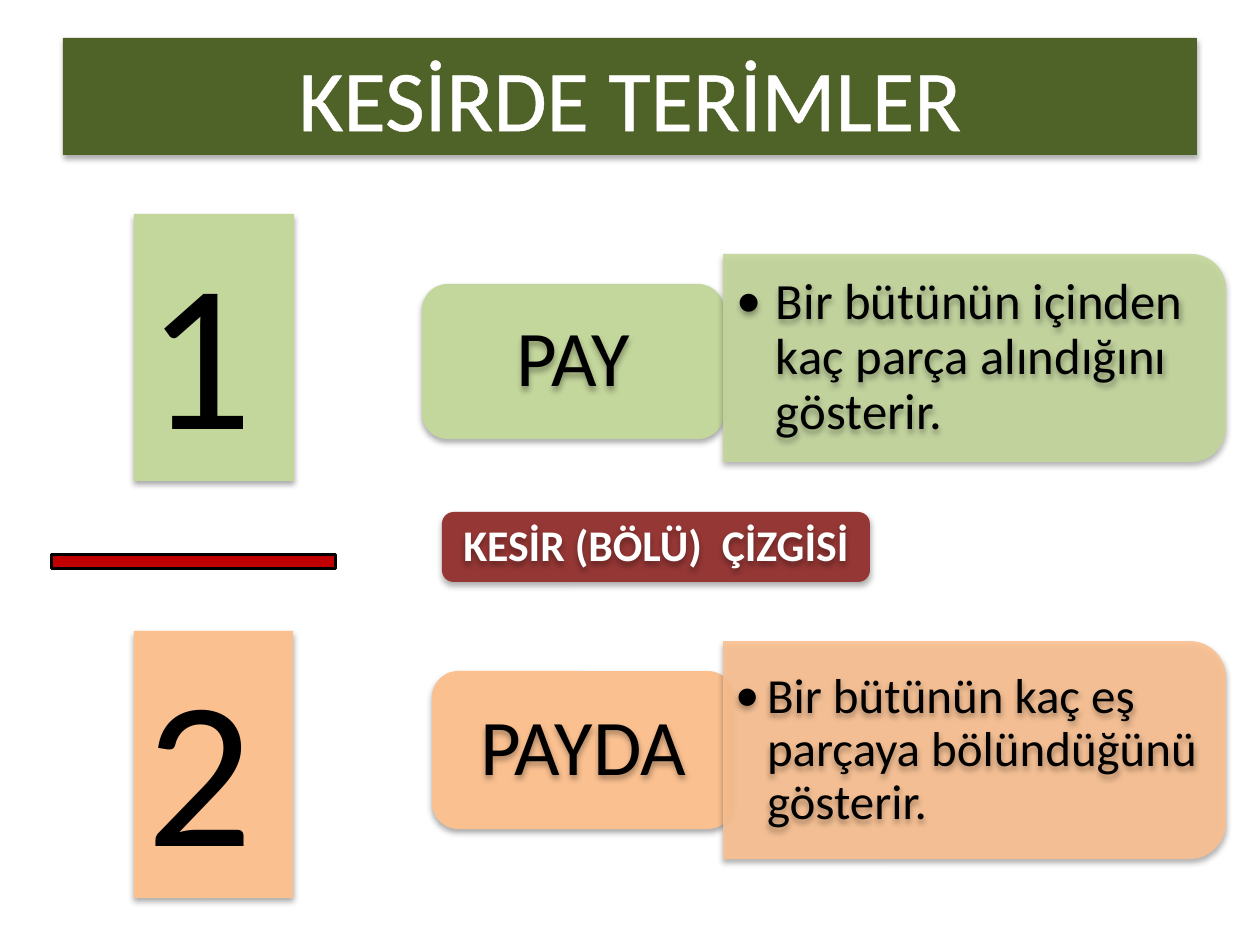
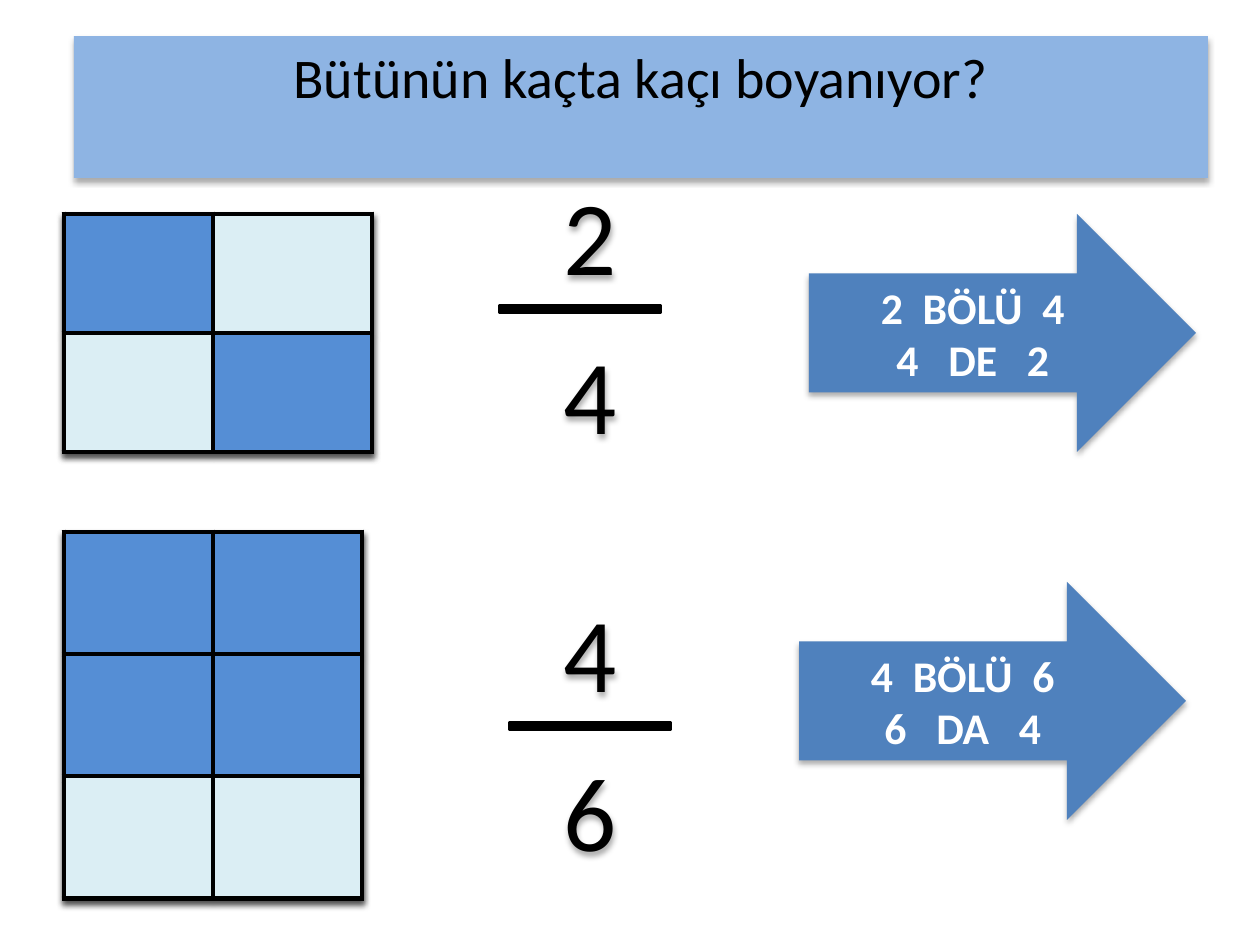
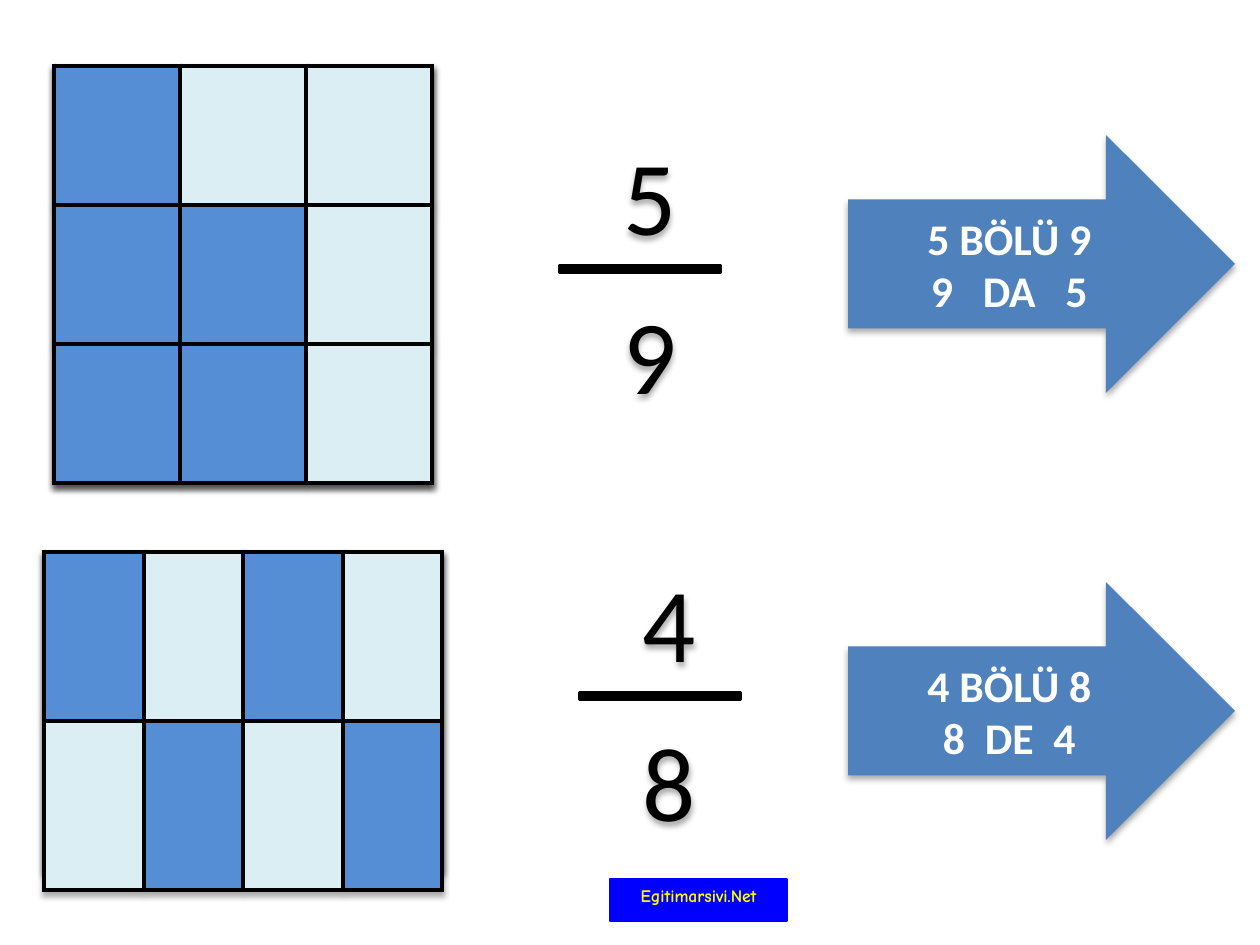
from dataclasses import dataclass

from lxml import etree
from pptx import Presentation
from pptx import util as u
from pptx.dml.color import RGBColor
from pptx.enum import shapes, text
from pptx.oxml import ns, parse_xml

SCALE = 9144000 / 1260  # EMU in one px
KIND = shapes.MSO_SHAPE


@dataclass(frozen=True)
class Theme:
    font: str = "Calibri"
    black: str = "000000"
    white: str = "FFFFFF"
    title_green: str = "4F6228"
    title_blue: str = "8EB4E3"
    green: str = "C3D69B"
    orange: str = "FAC090"
    maroon: str = "953735"
    red: str = "C00000"
    arrow: str = "4F81BD"
    painted: str = "558ED5"
    unpainted: str = "DBEEF4"
    label_font: str = "Comic Neue"
    label_fill: str = "0000FF"
    label_text: str = "FFFF00"
    label_size: int = 10
    title_size: float = 49.5
    title_outline: float = 1.45
    question_size: int = 32
    huge_size: int = 120
    digit_size: int = 60
    term_size: int = 45
    strong_size: int = 25
    outline: int = 2
    frame_line: int = 1
    grid_line: int = 3


THEME = Theme()

TITLE = ("KESİRDE TERİMLER", (63, 38, 1134, 117))
QUESTION = ("Bütünün kaçta kaçı boyanıyor?", (74, 36, 1134, 142))

# In a line made of parts, a number is a gap that many spaces wide.
LINE_NAME = [("KESİR (BÖLÜ)", 2, "ÇİZGİSİ")]

TERMS = [
    {"number": "1", "number_box": (134, 214, 160, 267), "color": THEME.green,
     "term": "PAY", "term_box": (422, 284, 302, 155),
     "meaning": "Bir bütünün içinden kaç parça alındığını gösterir.",
     "panel": (723, 254, 503, 208), "meaning_box": (722, 264, 491, 188),
     "size": 29, "indent": 39, "insets": (15, 8)},
    {"number": "2", "number_box": (134, 631, 159, 267), "color": THEME.orange,
     "term": "PAYDA", "term_box": (432, 671, 302, 158),
     "meaning": "Bir bütünün kaç eş parçaya bölündüğünü gösterir.",
     "panel": (723, 641, 503, 218), "meaning_box": (722, 652, 495, 197),
     "size": 28, "indent": 32, "insets": (13, 6)},
]

# In a grid, # is a painted cell and . an unpainted one.
# Row heights: the framed whole, the divided whole, the painted parts.
EXERCISES = [
    [
        {"grid": ["#.", ".#"], "at": (64, 214), "columns": [149, 159],
         "heights": [[119] * 2] * 3,
         "fraction": "2/4", "digit_at": (551, 165), "bar_left": 471,
         "arrow": (809, 214, 387, 238),
         "reading": [("2", 2, "BÖLÜ", 2, "4"), ("4", 3, "DE", 3, "2")]},
        {"grid": ["##", "##", ".."], "at": (64, 532), "columns": [149] * 2,
         "heights": [[122] * 3, [126, 126, 115], [122] * 3],
         "fraction": "4/6", "digit_at": (551, 582), "bar_left": 481,
         "arrow": (799, 582, 387, 238),
         "reading": [("4", 2, "BÖLÜ", 2, "6"), ("6", 3, "DA", 3, "4")]},
    ],
    [
        {"grid": ["#..", "##.", "##."], "at": (54, 66), "columns": [126] * 3,
         "heights": [[139] * 3] * 3,
         "fraction": "5/9", "digit_at": (610, 125), "bar_left": 531,
         "arrow": (848, 135, 387, 258),
         "reading": ["5 BÖLÜ 9", ("9", 3, "DA", 3, "5")]},
        {"grid": ["#.#.", ".#.#"], "at": (44, 552), "columns": [100, 99, 100, 99],
         "heights": [[159] * 2, [159] * 2, [169] * 2],
         "fraction": "4/8", "digit_at": (630, 552), "bar_left": 551,
         "arrow": (848, 582, 387, 258),
         "reading": ["4 BÖLÜ 8", ("8", 2, "DE", 2, "4")]},
    ],
]

SITE_LABEL = ("Egitimarsivi.Net", (610, 879, 177, 42))


def px(value):
    return u.Emu(round(value * SCALE))


def place(box):
    return [px(value) for value in box]


def shadow_effect():
    return parse_xml(
        f'<a:effectLst {ns.nsdecls("a")}>'
        '<a:outerShdw blurRad="44450" dist="27940" dir="5400000" rotWithShape="0">'
        f'<a:srgbClr val="{THEME.black}"><a:alpha val="32000"/></a:srgbClr>'
        '</a:outerShdw></a:effectLst>')


def line_xml(tag, width, color):
    return parse_xml(
        f'<a:{tag} {ns.nsdecls("a")} w="{u.Pt(width)}"><a:solidFill>'
        f'<a:srgbClr val="{color}"/></a:solidFill></a:{tag}>')


def paint(shape, color, opacity=100):
    shape.fill.solid()
    shape.fill.fore_color.rgb = RGBColor.from_string(color)
    if opacity < 100:
        tint = shape.fill._xPr.find(".//" + ns.qn("a:srgbClr"))
        etree.SubElement(tint, ns.qn("a:alpha"), val=str(opacity * 1000))


def add_block(page, kind, box, color, line=None, width=THEME.outline, opacity=100,
              rotation=0, shadow=True):
    block = page.shapes.add_shape(kind, *place(box))
    block.rotation = rotation
    paint(block, color, opacity)
    if line:
        block.line.color.rgb = RGBColor.from_string(line)
        block.line.width = u.Pt(width)
    else:
        block.line.fill.background()
    if shadow:
        block._element.spPr.append(shadow_effect())
    else:
        block.shadow.inherit = False
    return block


def write(shape, lines, size, color=THEME.black, font=THEME.font, bold=False, align="CENTER",
          anchor="MIDDLE", insets=(13, 6), spacing=1.0, bullet_indent=0, outline=0):
    frame = shape.text_frame
    frame.word_wrap = True
    frame.vertical_anchor = text.MSO_ANCHOR[anchor]
    frame.margin_left = frame.margin_right = px(insets[0])
    frame.margin_top = frame.margin_bottom = px(insets[1])
    for index, line in enumerate(lines):
        para = frame.add_paragraph() if index else frame.paragraphs[0]
        para.alignment = text.PP_ALIGN[align]
        para.line_spacing = spacing
        if bullet_indent:
            props = para._p.get_or_add_pPr()
            props.set("marL", str(px(bullet_indent)))
            props.set("indent", str(-px(bullet_indent)))
            etree.SubElement(props, ns.qn("a:buFont"), typeface=font)
            etree.SubElement(props, ns.qn("a:buChar"), char="•")
        for part in [line] if isinstance(line, str) else line:
            is_gap = isinstance(part, int)
            span = para.add_run()
            span.text = " " if is_gap else part
            span.font.name = font
            span.font.size = u.Pt(size)
            span.font.bold = bold
            span.font.color.rgb = RGBColor.from_string(color)
            props = span._r.get_or_add_rPr()
            if outline:
                props.insert(0, line_xml("ln", outline, color))
            if is_gap:  # one space is 0.226 em wide
                props.set("spc", str(round(22.6 * size * (part - 1))))


def add_text(page, box, lines, size, **style):
    """Text without a frame that casts its own shadow."""
    label = page.shapes.add_textbox(*place(box))
    label._element.spPr.append(shadow_effect())
    write(label, lines, size, **style)


def inset_box(box, dx, dy):
    left, top, width, height = box
    return left + dx, top + dy, width - 2 * dx, height - 2 * dy


def turned_box(box):
    """Frame that covers box after a quarter turn."""
    left, top, width, height = box
    return left + (width - height) / 2, top + (height - width) / 2, height, width


def add_term(page, term):
    color = term["color"]
    number = add_block(page, KIND.RECTANGLE, term["number_box"], color)
    write(number, [term["number"]], THEME.huge_size, align="LEFT", anchor="TOP")
    add_block(page, KIND.ROUNDED_RECTANGLE, term["term_box"], color)
    add_text(page, inset_box(term["term_box"], 8, 8), [term["term"]], THEME.term_size,
             insets=(24, 11), spacing=0.9)
    add_block(page, KIND.ROUND_2_SAME_RECTANGLE, turned_box(term["panel"]), color,
              opacity=90, rotation=90)
    add_text(page, term["meaning_box"], [term["meaning"]], term["size"], align="LEFT",
             insets=term["insets"], spacing=0.9, bullet_indent=term["indent"])


def add_grid(page, at, columns, heights, marks=None, framed=False):
    """Table of unpainted cells, painted where marked; framed draws only the outer border."""
    last_row, last_column = len(heights) - 1, len(columns) - 1
    box = (*at, sum(columns), sum(heights))
    table = page.shapes.add_table(len(heights), len(columns), *place(box)).table
    table.first_row = table.horz_banding = False
    table._tbl.tblPr.insert(0, shadow_effect())
    for column, width in zip(table.columns, columns):
        column.width = px(width)
    for y, height in enumerate(heights):
        table.rows[y].height = px(height)
        for x, cell in enumerate(table.rows[y].cells):
            outer = {"L": x == 0, "R": x == last_column, "T": y == 0, "B": y == last_row}
            for side, is_outer in outer.items():
                if is_outer or not framed:
                    width = THEME.frame_line if framed else THEME.grid_line
                    cell._tc.get_or_add_tcPr().append(
                        line_xml(f"ln{side}", width, THEME.black))
            is_painted = marks and marks[y][x] == "#"
            paint(cell, THEME.painted if is_painted else THEME.unpainted)


def add_fraction(page, fraction, digit_at, bar_left):
    left, top = digit_at
    for index, digit in enumerate(fraction.split("/")):
        add_text(page, (left, top + 159 * index, 79, 140), [digit], THEME.digit_size,
                 align="LEFT", anchor="TOP")
    add_block(page, KIND.MATH_MINUS, (bar_left, top + 129, 218, 30), THEME.black,
              line=THEME.black, shadow=False)


def add_exercise(page, item):
    whole, divided, painted = item["heights"]
    at, columns = item["at"], item["columns"]
    add_grid(page, at, columns, whole, framed=True)
    add_grid(page, at, columns, divided)
    add_grid(page, at, columns, painted, marks=item["grid"])
    add_fraction(page, item["fraction"], item["digit_at"], item["bar_left"])
    arrow = add_block(page, KIND.RIGHT_ARROW, item["arrow"], THEME.arrow)
    write(arrow, item["reading"], THEME.strong_size, color=THEME.white, bold=True)


def add_title(page, title, fill, size, **style):
    words, box = title
    write(add_block(page, KIND.RECTANGLE, box, fill), [words], size, **style)


def main():
    deck = Presentation()
    deck.slide_width, deck.slide_height = px(1260), px(945)
    terms_page, question_page, last_page = [
        deck.slides.add_slide(deck.slide_layouts[6]) for _ in range(3)]

    add_title(terms_page, TITLE, THEME.title_green, THEME.title_size, color=THEME.white,
              outline=THEME.title_outline)
    for term in TERMS:
        add_term(terms_page, term)
    add_block(terms_page, KIND.MATH_MINUS, (0, 532, 387, 59), THEME.red,
              line=THEME.black, shadow=False)
    name_box = (442, 512, 428, 70)
    add_block(terms_page, KIND.ROUNDED_RECTANGLE, name_box, THEME.maroon)
    add_text(terms_page, inset_box(name_box, 6, 3), LINE_NAME, THEME.strong_size,
             color=THEME.white, bold=True, spacing=0.9)

    add_title(question_page, QUESTION, THEME.title_blue, THEME.question_size, anchor="TOP")
    for page, exercises in zip((question_page, last_page), EXERCISES):
        for item in exercises:
            add_exercise(page, item)

    words, box = SITE_LABEL
    label = add_block(last_page, KIND.RECTANGLE, box, THEME.label_fill,
                      line=THEME.label_fill, width=0.75, shadow=False)
    write(label, [words], THEME.label_size, color=THEME.label_text, font=THEME.label_font,
          bold=True, anchor="TOP")
    deck.save("out.pptx")


if __name__ == "__main__":
    main()
